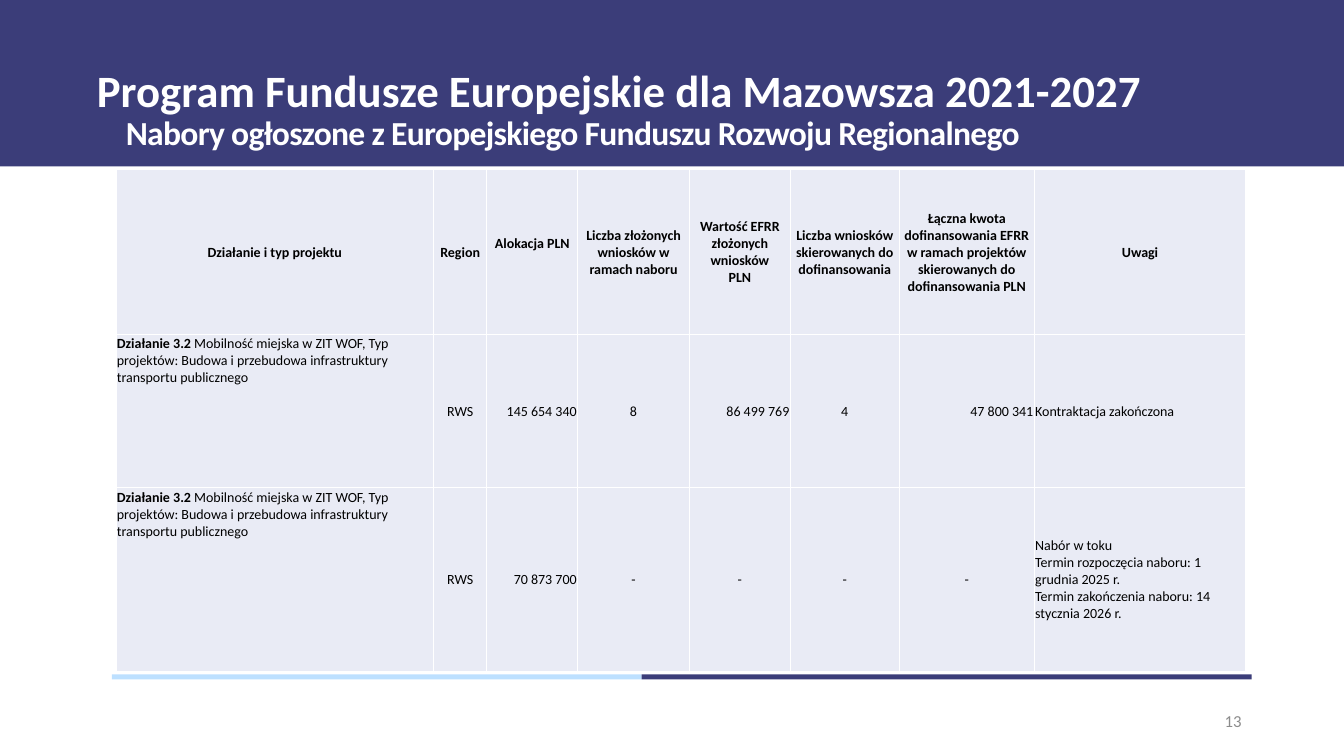
from lxml.etree import SubElement
from pptx import Presentation
from pptx.dml.color import RGBColor
from pptx.enum.shapes import MSO_SHAPE as Shape
from pptx.enum.text import MSO_ANCHOR as Anchor, MSO_AUTO_SIZE as AutoSize, PP_ALIGN as Align
from pptx.oxml.ns import qn
from pptx.util import Pt

COLORS = {"navy": "3B3D79", "sky": "BDE0FF", "cell": "E9EBF5",
          "white": "FFFFFF", "black": "000000", "gray": "8C8C8C"}
FONT = "Calibri"

TITLE = "Program Fundusze Europejskie dla Mazowsza 2021-2027"
SUBTITLE = "Nabory ogłoszone z Europejskiego Funduszu Rozwoju Regionalnego"
PAGE_NUMBER = "13"
HEADERS = [
    "Działanie i typ projektu",
    "Region",
    "Alokacja PLN",
    "Liczba złożonych wniosków w ramach naboru",
    "Wartość EFRR złożonych wniosków\nPLN",
    "Liczba wniosków skierowanych do dofinansowania",
    "Łączna kwota dofinansowania EFRR w ramach projektów skierowanych do dofinansowania PLN",
    "Uwagi",
]
MEASURE = "Działanie 3.2 "
PROJECT_TYPE = ("Mobilność miejska w ZIT WOF, Typ projektów: "
                "Budowa i przebudowa infrastruktury transportu publicznego")
CALLS = [
    ["RWS", "145 654 340", "8", "86 499 769", "4", "47 800 341", "Kontraktacja zakończona"],
    ["RWS", "70 873 700", "-", "-", "-", "-",
     "Nabór w toku\nTermin rozpoczęcia naboru: 1 grudnia 2025 r.\n"
     "Termin zakończenia naboru: 14 stycznia 2026 r."],
]

COLUMN_WIDTHS = [226.8, 38.2, 64.8, 79.9, 72, 77.8, 96.5, 151.2]
ROW_HEIGHTS = [118.1, 109.4, 131]
AMOUNT_COLUMNS = (2, 4, 6)
ALLOCATION_COLUMN = 2
REMARKS_COLUMN = 7
CELL_INSET = 0.72
LINE_HEIGHT = 12


def rgb(name):
    return RGBColor.from_string(COLORS[name])


def add_run(paragraph, text, size, color, bold=False):
    run = paragraph.add_run()
    run.text = text
    run.font.name = FONT
    run.font.size = Pt(size)
    run.font.bold = bold
    run.font.color.rgb = rgb(color)
    return run


def add_bar(slide, left, top, width, height, color):
    bar = slide.shapes.add_shape(Shape.RECTANGLE, Pt(left), Pt(top), Pt(width), Pt(height))
    bar.shadow.inherit = False
    bar.fill.solid()
    bar.fill.fore_color.rgb = rgb(color)
    bar.line.fill.background()
    return bar


def add_label(slide, left, top, width, height):
    frame = slide.shapes.add_textbox(Pt(left), Pt(top), Pt(width), Pt(height)).text_frame
    frame.word_wrap = True
    return frame


def add_borders(cell):
    properties = cell._tc.get_or_add_tcPr()
    for position, side in enumerate(("a:lnL", "a:lnR", "a:lnT", "a:lnB")):
        line = properties.makeelement(qn(side), {"w": str(Pt(1))})
        fill = SubElement(line, qn("a:solidFill"))
        SubElement(fill, qn("a:srgbClr"), val=COLORS["white"])
        properties.insert(position, line)


def fill_cell(cell, paragraphs, align, anchor):
    cell.fill.solid()
    cell.fill.fore_color.rgb = rgb("cell")
    add_borders(cell)
    cell.vertical_anchor = anchor
    cell.margin_left = cell.margin_right = cell.margin_top = Pt(CELL_INSET)
    cell.margin_bottom = 0
    for index, runs in enumerate(paragraphs):
        frame = cell.text_frame
        paragraph = frame.add_paragraph() if index else frame.paragraphs[0]
        paragraph.alignment = align
        for text, bold in runs:
            add_run(paragraph, text, 10, "black", bold)


def add_calls_table(slide):
    table = slide.shapes.add_table(
        len(ROW_HEIGHTS), len(COLUMN_WIDTHS), Pt(82.8), Pt(121),
        Pt(sum(COLUMN_WIDTHS)), Pt(sum(ROW_HEIGHTS))).table
    for column, width in zip(table.columns, COLUMN_WIDTHS):
        column.width = Pt(width)
    for row, height in zip(table.rows, ROW_HEIGHTS):
        row.height = Pt(height)

    for column, header in enumerate(HEADERS):
        lines = [[(line, True)] for line in header.split("\n")]
        fill_cell(table.cell(0, column), lines, Align.CENTER, Anchor.MIDDLE)
    table.cell(0, ALLOCATION_COLUMN).margin_bottom = Pt(LINE_HEIGHT)

    for row, values in enumerate(CALLS, start=1):
        fill_cell(table.cell(row, 0), [[(MEASURE, True), (PROJECT_TYPE, False)]],
                  Align.LEFT, Anchor.TOP)
        for column, value in enumerate(values, start=1):
            if column == REMARKS_COLUMN:
                align = Align.LEFT
            elif column in AMOUNT_COLUMNS and value != "-":
                align = Align.RIGHT
            else:
                align = Align.CENTER
            lines = [[(line, False)] for line in value.split("\n")]
            fill_cell(table.cell(row, column), lines, align, Anchor.MIDDLE)


def main():
    deck = Presentation()
    deck.slide_width, deck.slide_height = Pt(960), Pt(540)
    slide = deck.slides.add_slide(deck.slide_layouts[5])

    header_band = add_bar(slide, 0, 0, 960, 118.8, "navy")
    slide.shapes._spTree.insert(2, header_band._element)

    title = slide.shapes.title
    title.left, title.top, title.width, title.height = Pt(62), Pt(14.4), Pt(828), Pt(104.4)
    frame = title.text_frame
    frame.word_wrap = True
    frame.auto_size = AutoSize.NONE
    frame.vertical_anchor = Anchor.MIDDLE
    heading = frame.paragraphs[0]
    heading.alignment = Align.LEFT
    heading.line_spacing = 0.9
    add_run(heading, TITLE, 32, "white", True)

    subtitle = add_label(slide, 82.8, 76.3, 828, 45.4).paragraphs[0]
    tight = add_run(subtitle, SUBTITLE, 24, "white", True)
    tight.font._element.set("spc", "-50")

    add_bar(slide, 80, 481.7, 378.4, 3.6, "sky")
    add_bar(slide, 458.4, 481.7, 435.6, 3.6, "navy")
    add_calls_table(slide)

    footer = add_label(slide, 678, 500.4, 216, 28.8)
    footer.vertical_anchor = Anchor.MIDDLE
    footer.paragraphs[0].alignment = Align.RIGHT
    add_run(footer.paragraphs[0], PAGE_NUMBER, 12, "gray")

    deck.save("out.pptx")


if __name__ == "__main__":
    main()
